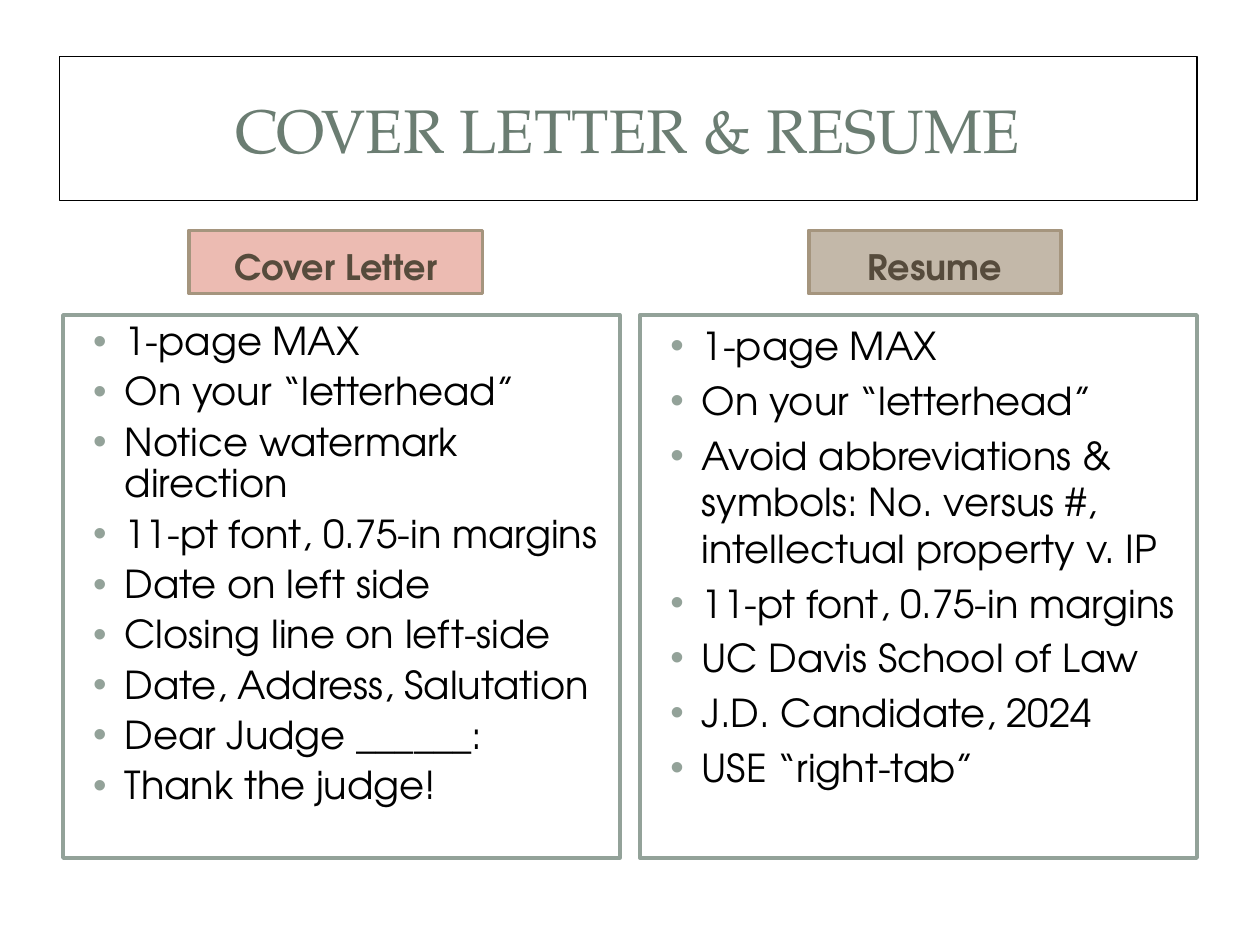
from pptx import Presentation
from pptx.dml.color import RGBColor as RGB
from pptx.enum.shapes import MSO_SHAPE as Shape
from pptx.enum.text import MSO_ANCHOR as Anchor, MSO_AUTO_SIZE as Auto, PP_ALIGN as Align
from pptx.oxml.ns import qn
from pptx.util import Inches, Pt
from lxml.etree import SubElement

TITLE = "COVER LETTER & RESUME"
COLUMNS = [
    {"head": "Cover Letter", "tint": "ECBBB2", "left": 1.5, "width": 2.33, "pitch": 0.9,
     "items": ["1-page MAX", "On your “letterhead”", "Notice watermark direction",
               "11-pt font, 0.75-in margins", "Date on left side",
               "Closing line on left-side", "Date, Address, Salutation",
               "Dear Judge ______:", "Thank the judge!"]},
    {"head": "Resume", "tint": "C3B8A9", "left": 6.42, "width": 2, "pitch": 1.0,
     "items": ["1-page MAX", "On your “letterhead”",
               "Avoid abbreviations & symbols: No. versus #, intellectual property v. IP",
               "11-pt font, 0.75-in margins", "UC Davis School of Law",
               "J.D. Candidate, 2024", "USE “right-tab”"]},
]
THEME = {
    "serif": "TeX Gyre Pagella", "sans": "TeX Gyre Adventor",
    "title": "6B7D72", "head": "564B3C", "text": "000000",
    "paper": "FFFFFF", "frame": "000000", "rim": "A5957E", "sage": "93A299",
    "title_size": 35, "head_size": 20, "text_size": 22,
}
LEFT, STEP = 0.5, 4.58


def place(shape, *box):
    shape.left, shape.top, shape.width, shape.height = map(Inches, box)


def outline(shape, color, width):
    shape.line.color.rgb = RGB.from_string(color)
    shape.line.width = Pt(width)


def panel(slide, box, fill, line, width):
    shape = slide.shapes.add_shape(Shape.RECTANGLE, *map(Inches, box))
    shape.shadow.inherit = False
    shape.fill.solid()
    shape.fill.fore_color.rgb = RGB.from_string(fill)
    outline(shape, line, width)
    return shape


def frame(shape, anchor):
    text = shape.text_frame
    text.word_wrap = True
    text.auto_size = Auto.NONE
    text.vertical_anchor = anchor
    text.margin_left = text.margin_right = Inches(0.05)
    text.margin_top = text.margin_bottom = Inches(0.05)
    return text


def style(para, face, size, color, bold=False):
    font = para.font
    font.name, font.size, font.bold = face, Pt(size), bold
    font.color.rgb = RGB.from_string(color)


def bullet(para):
    props = para._p.get_or_add_pPr()
    props.set("marL", str(Inches(0.38)))
    props.set("indent", str(Inches(-0.25)))
    tint = SubElement(props, qn("a:buClr"))
    SubElement(tint, qn("a:srgbClr"), val=THEME["sage"])
    SubElement(props, qn("a:buFont"), typeface="Arial")
    SubElement(props, qn("a:buChar"), char="•")


def label(shape, words, anchor, face, size, color, bold=False):
    text = frame(shape, anchor)
    text.text = words
    para = text.paragraphs[0]
    para.alignment = Align.CENTER
    style(para, face, size, color, bold)


def listing(slide, box, items, pitch):
    text = frame(slide.shapes.add_textbox(*map(Inches, box)), Anchor.TOP)
    for rank, item in enumerate(items):
        para = text.add_paragraph() if rank else text.paragraphs[0]
        para.text = item
        bullet(para)
        para.line_spacing = pitch
        para.space_before = Pt(5 if rank else 0)
        style(para, THEME["sans"], THEME["text_size"], THEME["text"])


def main():
    deck = Presentation()
    deck.slide_width, deck.slide_height = Inches(10), Inches(7.5)
    slide = deck.slides.add_slide(deck.slide_layouts[5])
    title = slide.shapes.title
    place(title, 0.47, 0.45, 9.03, 1.14)
    outline(title, THEME["frame"], 0.75)
    label(title, TITLE, Anchor.MIDDLE, THEME["serif"], THEME["title_size"], THEME["title"])
    for rank, col in enumerate(COLUMNS):
        left = LEFT + rank * STEP
        head = panel(slide, (col["left"], 1.83, col["width"], 0.5),
                     col["tint"], THEME["rim"], 2.25)
        label(head, col["head"], Anchor.BOTTOM, THEME["sans"],
              THEME["head_size"], THEME["head"], True)
        panel(slide, (left, 2.5, 4.42, 4.31), THEME["paper"], THEME["sage"], 2)
        listing(slide, (left + 0.06, 2.51, 4.29, 4.28), col["items"], col["pitch"])
    deck.save("out.pptx")


if __name__ == "__main__":
    main()
